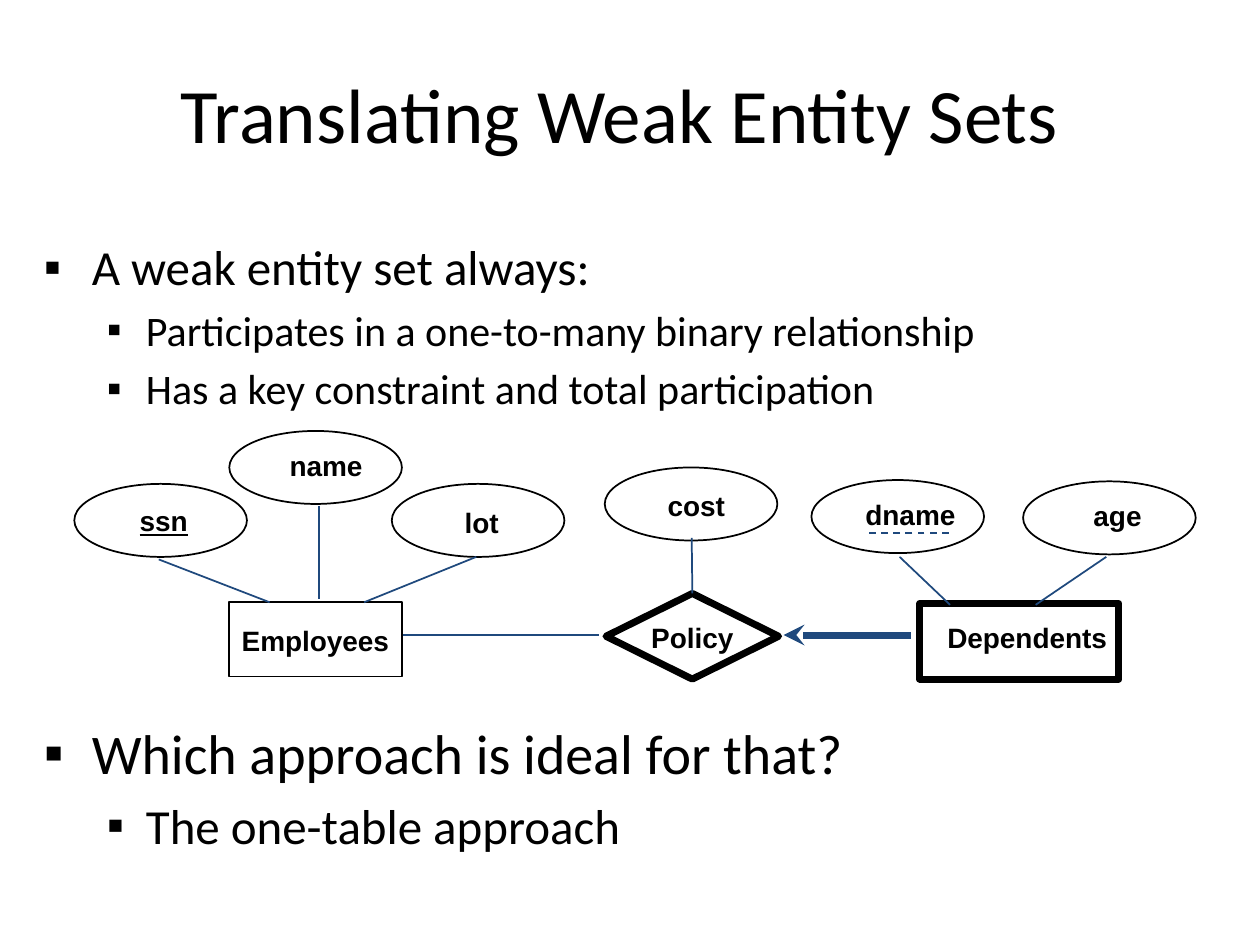
from lxml import etree
from pptx import Presentation
from pptx import util as u
from pptx.dml.color import RGBColor
from pptx.enum import dml, shapes, text
from pptx.oxml.ns import qn

BLACK, NAVY = "000000", "1F497D"
THIN, THICK = 1, 4
OVAL, RECT, DIAMOND = (shapes.MSO_SHAPE.OVAL, shapes.MSO_SHAPE.RECTANGLE,
                       shapes.MSO_SHAPE.DIAMOND)
ATTRIBUTE_SIZE = (1.37, 0.58)

# Name, oval position, label position and width, underlined; inside the diagram
ATTRIBUTES = [
    ("ssn", (0.09, 0.44), (0.51, 0.55, 0.58), True),
    ("name", (1.32, 0.02), (1.7, 0.11, 0.78), False),
    ("lot", (2.61, 0.44), (3.09, 0.56, 0.47), False),
    ("cost", (4.3, 0.31), (4.7, 0.43, 0.65), False),
    ("dname", (5.94, 0.41), (6.27, 0.5, 0.91), False),
    ("age", (7.62, 0.42), (8.08, 0.51, 0.58), False),
]
# Name, shape, box, label position and width, line width
SETS = [
    ("Employees", RECT, (1.32, 1.38, 1.37, 0.59), (1.32, 1.5, 1.37), THIN),
    ("Policy", DIAMOND, (4.31, 1.31, 1.37, 0.68), (4.57, 1.48, 0.85), THICK),
    ("Dependents", RECT, (6.8, 1.39, 1.58, 0.6), (6.92, 1.48, 1.47), THICK),
]
# Start and end of the thin links
LINKS = [
    ((2.03, 0.62), (2.03, 1.35)),  # name - Employees
    ((0.76, 1.04), (1.64, 1.38)),  # ssn - Employees
    ((3.28, 1.02), (2.39, 1.38)),  # lot - Employees
    ((6.64, 1.02), (7.04, 1.4)),   # dname - Dependents
    ((8.28, 1.02), (7.72, 1.4)),   # age - Dependents
    ((4.25, 1.64), (2.7, 1.64)),   # Policy - Employees
]


def color(value):
    return RGBColor.from_string(value)


def add_span(para, words, size, font, bold=False, underline=None):
    span = para.add_run()
    span.text = words
    span.font.size = u.Pt(size)
    span.font.name = font
    span.font.bold = bold
    span.font.underline = underline
    span.font.color.rgb = color(BLACK)


def add_box(page, left, top, width, height, wrap=True):
    box = page.shapes.add_textbox(*map(u.Inches, (left, top, width, height)))
    box.text_frame.word_wrap = wrap
    return box.text_frame


def add_outline(page, kind, left, top, width, height, weight):
    shape = page.shapes.add_shape(kind, *map(u.Inches, (left, top, width, height)))
    shape.shadow.inherit = False
    shape.fill.background()
    shape.line.color.rgb = color(BLACK)
    shape.line.width = u.Pt(weight)
    etree.SubElement(shape.line._get_or_add_ln(), qn("a:round"))
    return shape


def add_link(page, origin, start, end, weight=THIN):
    ends = [u.Inches(base + step) for point in (start, end)
            for base, step in zip(origin, point)]
    link = page.shapes.add_connector(shapes.MSO_CONNECTOR.STRAIGHT, *ends)
    link.line.color.rgb = color(NAVY)
    link.line.width = u.Pt(weight)
    etree.SubElement(link._element.spPr, qn("a:effectLst"))
    return link


def add_label(page, origin, place, words, underline=None):
    left, top, width = place
    frame = add_box(page, origin[0] + left, origin[1] + top, width, 0.36, wrap=False)
    frame.margin_right = 0  # keeps the word on one line
    add_span(frame.paragraphs[0], words, 16, "Arial", True, underline)


def add_title(page, box, words):
    frame = add_box(page, *box)
    frame.vertical_anchor = text.MSO_ANCHOR.MIDDLE
    para = frame.paragraphs[0]
    para.alignment = text.PP_ALIGN.CENTER
    add_span(para, words, 44, "Calibri")


def add_bullets(page, box, items):
    """Items are (level, size, words)."""
    frame = add_box(page, *box)
    for index, (level, size, words) in enumerate(items):
        para = frame.add_paragraph() if index else frame.paragraphs[0]
        para.level = level
        if index:
            para.space_before = u.Pt(0.2 * size)
        margin, hang = ((0.38, 0.38), (0.81, 0.31))[level]
        props = para._p.get_or_add_pPr()
        props.set("marL", str(u.Inches(margin)))
        props.set("indent", str(-u.Inches(hang)))
        etree.SubElement(props, qn("a:buFont"), typeface="Arial")
        etree.SubElement(props, qn("a:buChar"), char="▪")
        add_span(para, words, size, "Calibri")


def add_diagram(page, origin):
    left, top = origin
    # Attributes
    for name, (x, y), place, underline in ATTRIBUTES:
        add_outline(page, OVAL, left + x, top + y, *ATTRIBUTE_SIZE, THIN)
        add_label(page, origin, place, name, underline)

    # Entity sets and their relationship
    outlines = {}
    for name, kind, (x, y, width, height), place, weight in SETS:
        outlines[name] = add_outline(page, kind, left + x, top + y, width, height, weight)
        add_label(page, origin, place, name)

    # Links
    for start, end in LINKS:
        add_link(page, origin, start, end)
    cost_link = add_link(page, origin, (4.99, 0.87), (4.99, 1.32))
    cost_link.end_connect(outlines["Policy"], 0)

    # Dashed underline of the partial key
    partial_key = add_link(page, origin, (7.03, 0.83), (6.37, 0.83))
    partial_key.line.dash_style = dml.MSO_LINE.DASH

    # Key constraint with total participation
    arrow = add_link(page, origin, (5.72, 1.64), (6.73, 1.64), THICK)
    etree.SubElement(arrow.line._get_or_add_ln(), qn("a:headEnd"), type="stealth")


def main():
    deck = Presentation()
    deck.slide_width, deck.slide_height = u.Inches(10), u.Inches(7.5)
    page = deck.slides.add_slide(deck.slide_layouts[6])
    add_title(page, (0.67, 0.29, 8.5, 1.21), "Translating Weak Entity Sets")
    add_bullets(page, (0.25, 1.83, 9.58, 1.55), [
        (0, 28, "A weak entity set always:"),
        (1, 24, "Participates in a one-to-many binary relationship"),
        (1, 24, "Has a key constraint and total participation"),
    ])
    add_diagram(page, (0.5, 3.4))
    add_bullets(page, (0.25, 5.65, 9.58, 1.42), [
        (0, 32, "Which approach is ideal for that?"),
        (1, 28, "The one-table approach"),
    ])
    deck.save("out.pptx")


if __name__ == "__main__":
    main()
